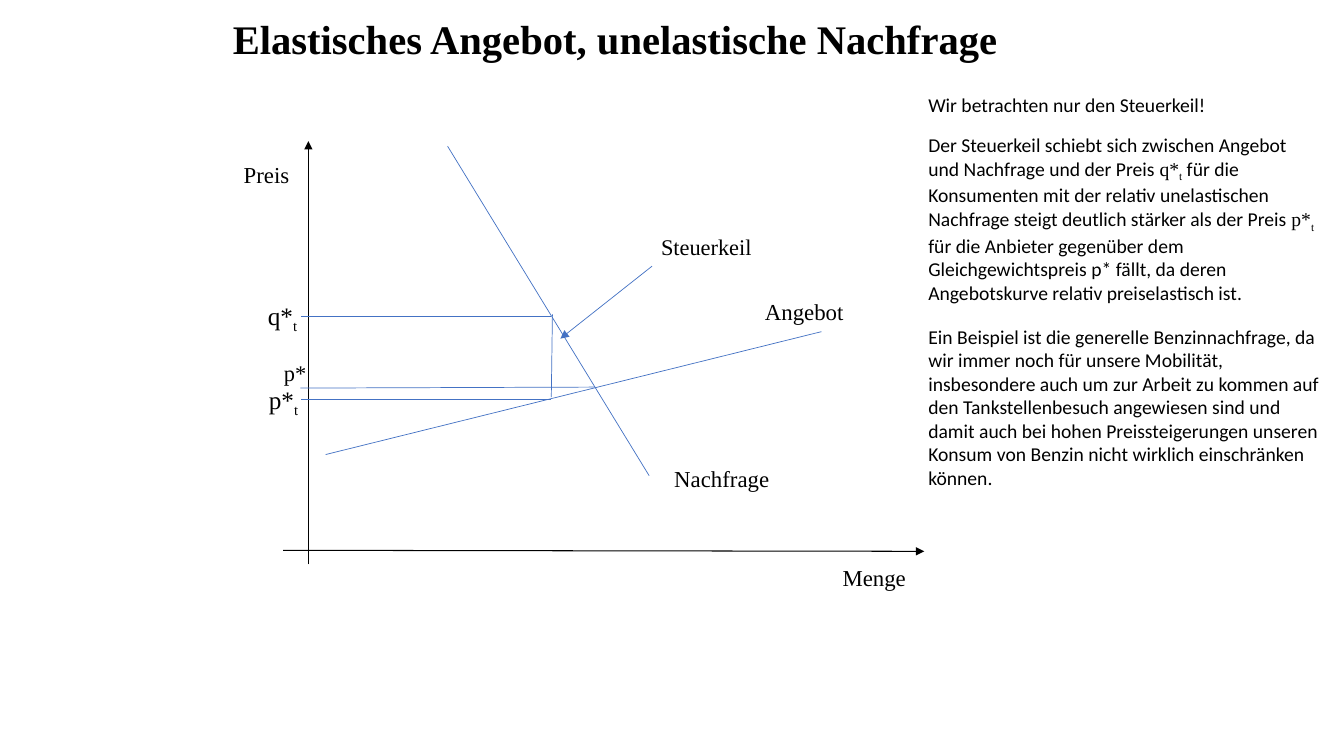
import dataclasses

import lxml.etree
import pptx
import pptx.dml.color
import pptx.enum.shapes
import pptx.enum.text
import pptx.oxml.ns
import pptx.util

Pt = pptx.util.Pt
qn = pptx.oxml.ns.qn


@dataclasses.dataclass(frozen=True)
class Theme:
    text: str = "000000"
    axis: str = "000000"
    curve: str = "4472C4"
    serif: str = "Times New Roman"
    sans: str = "Calibri"
    title_size: float = 29
    label_size: float = 16.3
    small_label_size: float = 16
    price_size: float = 18
    body_size: float = 14
    axis_width: float = 0.75
    curve_width: float = 0.5


THEME = Theme()


def color(value):
    return pptx.dml.color.RGBColor.from_string(value)


def add_run(paragraph, text, font, size, bold=False, subscript=False):
    run = paragraph.add_run()
    run.text = text
    run.font.name = font
    run.font.size = Pt(size)
    run.font.bold = bold
    run.font.color.rgb = color(THEME.text)
    if subscript:
        run.font._element.set("baseline", "-25000")


def add_text_frame(slide, left, top, width, height, wrap=True):
    shape = slide.shapes.add_textbox(Pt(left), Pt(top), Pt(width), Pt(height))
    frame = shape.text_frame
    frame.word_wrap = wrap
    frame.auto_size = pptx.enum.text.MSO_AUTO_SIZE.SHAPE_TO_FIT_TEXT
    return frame


def add_line(slide, start, end, line_color, width, arrow=False):
    connector = slide.shapes.add_connector(
        pptx.enum.shapes.MSO_CONNECTOR.STRAIGHT, *(Pt(value) for value in start + end))
    connector.line.color.rgb = color(line_color)
    connector.line.width = Pt(width)
    if arrow:
        tail = lxml.etree.SubElement(connector.line._get_or_add_ln(), qn("a:tailEnd"))
        tail.set("type", "triangle")
    lxml.etree.SubElement(connector._element.spPr, qn("a:effectLst"))


def add_title(slide, left, top, width, height):
    frame = add_text_frame(slide, left, top, width, height)
    frame.auto_size = pptx.enum.text.MSO_AUTO_SIZE.NONE
    frame.vertical_anchor = pptx.enum.text.MSO_ANCHOR.MIDDLE
    frame.margin_right = Pt(14)
    paragraph = frame.paragraphs[0]
    paragraph.alignment = pptx.enum.text.PP_ALIGN.CENTER
    add_run(paragraph, "Elastisches Angebot, unelastische Nachfrage",
            THEME.serif, THEME.title_size, bold=True)


def add_diagram(slide, left, top):
    def line(start, end, line_color=THEME.curve, width=THEME.curve_width, arrow=False):
        add_line(slide, (left + start[0], top + start[1]),
                 (left + end[0], top + end[1]), line_color, width, arrow)

    # Axes
    for start, end in (((60.3, 303.2), (60.3, 0.8)), ((42.3, 293.1), (500.2, 293.8))):
        line(start, end, THEME.axis, THEME.axis_width, arrow=True)

    # Supply and demand
    line((72.6, 224.7), (426.8, 136.9))
    line((159.7, 4.4), (303.7, 239.8))

    # Prices with and without the tax, and the tax wedge
    price_left, taxed_quantity = 55.3, 233.8
    for price in (126.1, 185.1):
        line((price_left, price), (taxed_quantity, price))
    line((54.6, 177.2), (264.8, 176.5))
    line((taxed_quantity, 183.7), (234.6, 124.6))
    line((305.8, 90.1), (240.3, 141.9), arrow=True)

    # Labels: text, subscript, size, left, top, width, height
    labels = (
        ("Preis", "", THEME.label_size, 7, 10.9, 47.5, 27.4),
        ("Menge", "", THEME.label_size, 434.7, 298.9, 61.2, 27.4),
        ("Angebot", "", THEME.label_size, 379.3, 108.8, 71.3, 27.4),
        ("Nachfrage", "", THEME.label_size, 314.5, 228.3, 82.8, 27.4),
        ("Steuerkeil", "", THEME.small_label_size, 305.1, 62.7, 80.6, 26.6),
        ("p*", "", THEME.small_label_size, 35.8, 152.7, 31, 26.6),
        ("p*", "t", THEME.price_size, 25, 170.7, 36, 28.8),
        ("q*", "t", THEME.price_size, 24.3, 111, 36, 28.8),
    )
    for text, subscript, size, x, y, width, height in labels:
        frame = add_text_frame(slide, left + x, top + y, width, height, wrap=False)
        paragraph = frame.paragraphs[0]
        add_run(paragraph, text, THEME.serif, size)
        if subscript:
            add_run(paragraph, subscript, THEME.serif, size, subscript=True)


def add_explanation(slide, left, top, width):
    # Each block: top, height, paragraphs; each run: text, font, subscript
    sans, serif = THEME.sans, THEME.serif
    blocks = (
        (0, 24.5, [[("Wir betrachten nur den Steuerkeil!", sans, False)]]),
        (28.8, 126, [
            [("Der Steuerkeil schiebt sich zwischen Angebot und Nachfrage und der Preis ",
              sans, False),
             ("q*", serif, False), ("t", serif, True),
             (" für die Konsumenten mit der relativ unelastischen Nachfrage steigt "
              "deutlich stärker als der Preis ", sans, False),
             ("p*", serif, False), ("t", serif, True)],
            [("für die Anbieter gegenüber dem Gleichgewichtspreis p* fällt, da deren "
              "Angebotskurve relativ preiselastisch ist.", sans, False)]]),
        (165.6, 126, [
            [("Ein Beispiel ist die generelle Benzinnachfrage, da wir immer noch für "
              "unsere Mobilität, insbesondere auch um zur Arbeit zu kommen auf den "
              "Tankstellenbesuch angewiesen sind und damit auch bei hohen "
              "Preissteigerungen unseren Konsum von Benzin nicht wirklich einschränken "
              "können.", sans, False)]]),
    )
    for offset, height, paragraphs in blocks:
        frame = add_text_frame(slide, left, top + offset, width, height)
        for index, runs in enumerate(paragraphs):
            paragraph = frame.add_paragraph() if index else frame.paragraphs[0]
            for text, font, subscript in runs:
                add_run(paragraph, text, font, THEME.body_size, subscript=subscript)


def main():
    presentation = pptx.Presentation()
    presentation.slide_width = Pt(960)
    presentation.slide_height = Pt(540)
    slide = presentation.slides.add_slide(presentation.slide_layouts[6])
    add_title(slide, 144, 16.6, 598.3, 21.6)
    add_diagram(slide, 160, 100)
    add_explanation(slide, 656, 62.6, 295.2)
    presentation.save("out.pptx")


if __name__ == "__main__":
    main()
